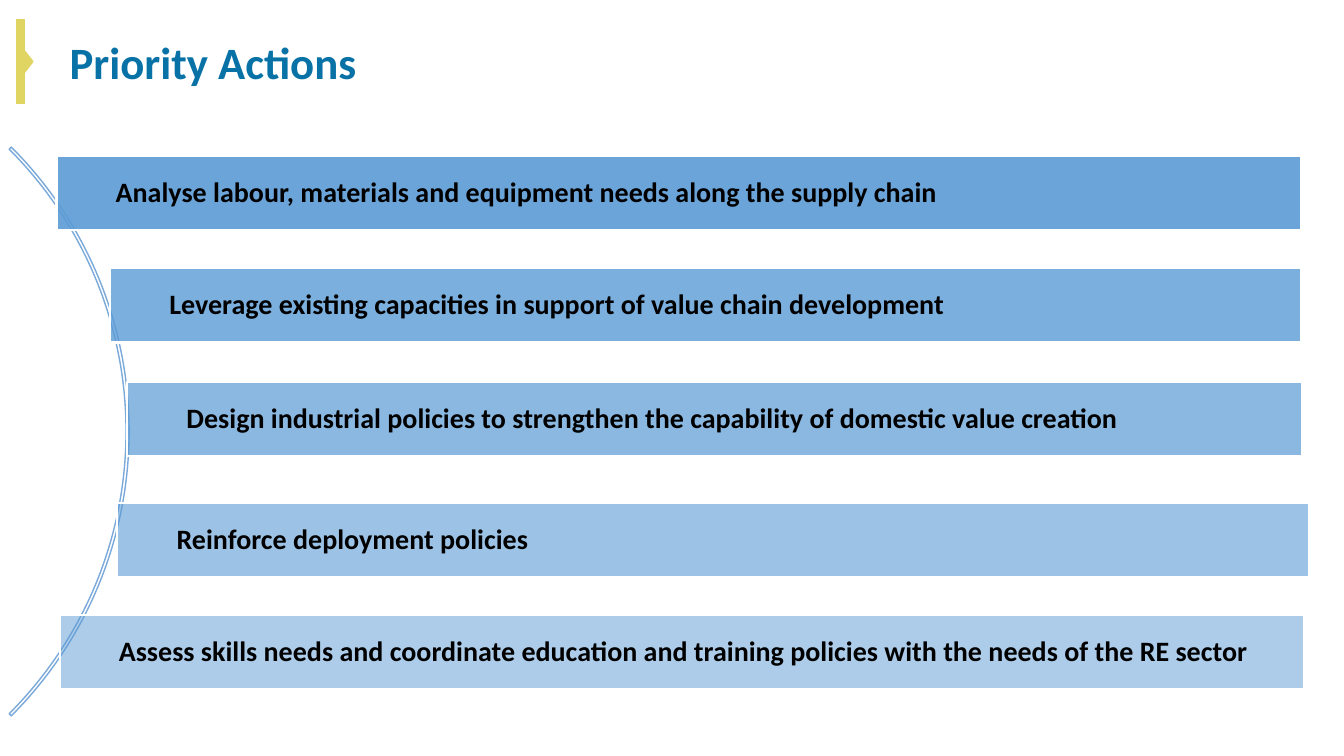
"""Build the Priority Actions slide: five graded bars along an arc."""
from lxml.etree import SubElement
from pptx import Presentation
from pptx.dml.color import RGBColor
from pptx.enum.shapes import MSO_CONNECTOR, MSO_SHAPE
from pptx.enum.text import MSO_ANCHOR, MSO_AUTO_SIZE, PP_ALIGN
from pptx.oxml.ns import qn
from pptx.util import Pt

HEADING = "Priority Actions"
ACTIONS = [
    ("Analyse labour, materials and equipment needs along the supply chain", 40.4, 111.6, 889),
    ("Leverage existing capacities in support of value chain development", 78.6, 191.7, 851),
    ("Design industrial policies to strengthen the capability of domestic value creation", 90.9, 273, 839),
    ("Reinforce deployment policies", 83.8, 359.3, 851),
    ("Assess skills needs and coordinate education and training policies with the needs of the RE sector",
     42.6, 439.4, 889),
]
BAR_HEIGHT = 53

THEME = {
    "heading": RGBColor(0x08, 0x72, 0xA6),
    "bar": RGBColor(0x5B, 0x9B, 0xD5),
    "edge": RGBColor(0xFF, 0xFF, 0xFF),
    "arc": RGBColor(0x7A, 0xA9, 0xDA),
    "marker": RGBColor(0xE0, 0xD5, 0x63),
    "text": RGBColor(0, 0, 0),
    "font": "Calibri",
    "heading_size": Pt(32),
    "action_size": Pt(20),
}
FRAME_FORMATS = {
    "heading": {"word_wrap": False, "auto_size": MSO_AUTO_SIZE.SHAPE_TO_FIT_TEXT,
                "vertical_anchor": MSO_ANCHOR.TOP},
    "action": {"word_wrap": True, "vertical_anchor": MSO_ANCHOR.MIDDLE,
               "margin_left": Pt(42.3), "margin_right": Pt(4), "margin_top": Pt(4), "margin_bottom": Pt(4)},
}
PARAGRAPH_FORMATS = {
    "heading": {"alignment": PP_ALIGN.LEFT},
    "action": {"alignment": PP_ALIGN.LEFT, "line_spacing": 0.9},
}
FONT_FORMATS = {
    "heading": {"name": THEME["font"], "size": THEME["heading_size"], "bold": True},
    "action": {"name": THEME["font"], "size": THEME["action_size"], "bold": True},
}


def apply(target, formats):
    """Set every attribute named in formats."""
    for attribute, value in formats.items():
        setattr(target, attribute, value)


def write(frame, wording, role, color):
    """Fill a text frame with one formatted paragraph."""
    frame.text = wording
    paragraph = frame.paragraphs[0]
    apply(frame, FRAME_FORMATS[role])
    apply(paragraph, PARAGRAPH_FORMATS[role])
    font = paragraph.runs[0].font
    apply(font, FONT_FORMATS[role])
    font.color.rgb = color


def outline(line, color, width):
    """Give a line its colour and width."""
    line.color.rgb = color
    line.width = Pt(width)


def add_shape(slide, preset, box, fill, edge, edge_width):
    """Add a flat preset shape; a fill of None leaves it hollow."""
    shape = slide.shapes.add_shape(preset, *map(Pt, box))
    shape.shadow.inherit = False
    if fill is None:
        shape.fill.background()
    else:
        shape.fill.solid()
        shape.fill.fore_color.rgb = fill
    outline(shape.line, edge, edge_width)
    return shape


def add_heading(slide):
    """Place the slide title."""
    title = slide.shapes.title
    apply(title, {"left": Pt(42.5), "top": Pt(20.9), "width": Pt(222), "height": Pt(46)})
    write(title.text_frame, HEADING, "heading", THEME["heading"])


def add_arc(slide):
    """Draw the thin arc that the bars follow."""
    arc = add_shape(slide, MSO_SHAPE.BLOCK_ARC, (-482.4, 20.9, 574.6, 574.6), None, THEME["arc"], 1)
    for position, value in enumerate((189, 27, 0.00376)):
        arc.adjustments[position] = value


def add_actions(slide):
    """Draw the bars, each ten points more transparent than the last."""
    for rank, (action, left, top, width) in enumerate(ACTIONS):
        bar = add_shape(slide, MSO_SHAPE.RECTANGLE, (left, top, width, BAR_HEIGHT),
                        THEME["bar"], THEME["edge"], 1.5)
        tint = bar.fill._xPr.find(qn("a:solidFill"))[0]
        SubElement(tint, qn("a:alpha"), val=str(90000 - 10000 * rank))
        write(bar.text_frame, action, "action", THEME["text"])


def add_marker(slide):
    """Draw the upright rule and its pointer beside the title."""
    rule = slide.shapes.add_connector(MSO_CONNECTOR.STRAIGHT, Pt(14.6), Pt(13.7), Pt(14.6), Pt(74.5))
    outline(rule.line, THEME["marker"], 6)
    SubElement(rule._element.spPr, qn("a:effectLst"))
    pointer = add_shape(slide, MSO_SHAPE.ISOSCELES_TRIANGLE, (11, 40.5, 18, 7),
                        THEME["marker"], THEME["marker"], 1)
    pointer.rotation = 90


def main():
    """Assemble and save the slide."""
    deck = Presentation()
    apply(deck, {"slide_width": Pt(960), "slide_height": Pt(540)})
    slide = deck.slides.add_slide(deck.slide_layouts[5])
    for add_part in (add_heading, add_arc, add_actions, add_marker):
        add_part(slide)
    deck.save("out.pptx")


if __name__ == "__main__":
    main()
